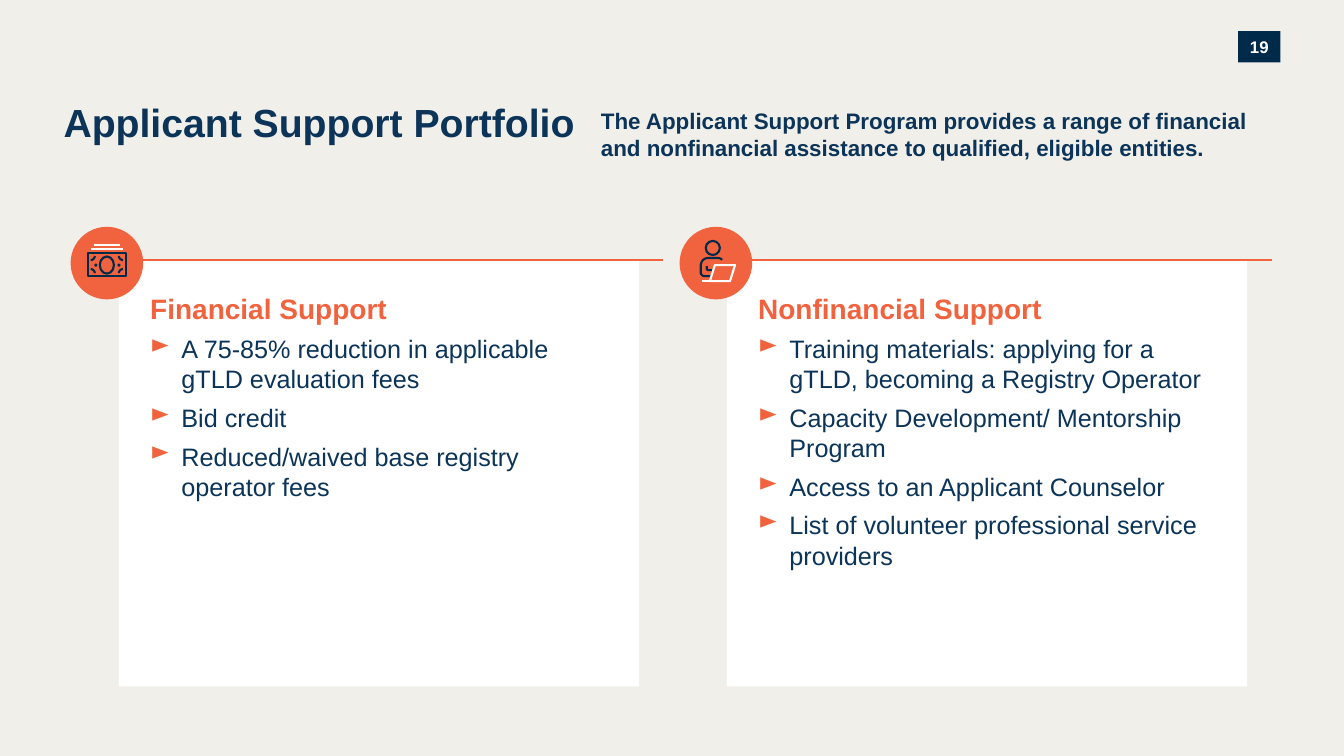
"""Build the Applicant Support Portfolio slide."""
import math
from dataclasses import dataclass

import lxml.etree
import pptx
import pptx.dml.color
import pptx.enum.shapes
import pptx.enum.text
import pptx.oxml.ns
import pptx.util

Inches = pptx.util.Inches
Pt = pptx.util.Pt
RGBColor = pptx.dml.color.RGBColor
Shapes = pptx.enum.shapes.MSO_SHAPE
Align = pptx.enum.text.PP_ALIGN
Anchor = pptx.enum.text.MSO_ANCHOR
qn = pptx.oxml.ns.qn
Point = tuple[float, float]

CREAM = RGBColor(0xF1, 0xEF, 0xEA)
NAVY = RGBColor(0x0B, 0x34, 0x58)
DARK = RGBColor(0x00, 0x2A, 0x49)
ORANGE = RGBColor(0xF1, 0x63, 0x3E)
WHITE = RGBColor(0xFF, 0xFF, 0xFF)
CARD_TOP = 2.58


@dataclass
class Card:
    left: float
    rule_start: float
    rule_end: float
    right_inset: float
    heading: str
    items: list[str]


CARDS = [
    Card(7.21, 7.21, 12.62, 0.35, "Nonfinancial Support", [
        "Training materials: applying for a gTLD, becoming a Registry Operator",
        "Capacity Development/ Mentorship Program",
        "Access to an Applicant Counselor",
        "List of volunteer professional service providers",
    ]),
    Card(1.18, 1.16, 6.58, 0.24, "Financial Support", [
        "A 75-85% reduction in applicable gTLD evaluation fees",
        "Bid credit",
        "Reduced/waived base registry operator fees",
    ]),
]


def set_frame(frame, *, insets=(0, 0, 0, 0), anchor=Anchor.TOP) -> None:
    """Set wrapping, insets (left, top, right, bottom) and anchor."""
    frame.word_wrap = True
    frame.auto_size = pptx.enum.text.MSO_AUTO_SIZE.NONE
    frame.vertical_anchor = anchor
    frame.margin_left, frame.margin_top, frame.margin_right, frame.margin_bottom = map(Inches, insets)


def write(paragraph, text: str, *, size: float, color: RGBColor, bold: bool = True,
          align=Align.LEFT, bullet: bool = False) -> None:
    """Write formatted text into a paragraph."""
    paragraph.alignment = align
    if bullet:
        paragraph.space_before = Pt(6)
        properties = paragraph._p.get_or_add_pPr()
        properties.set("marL", str(Inches(0.31)))
        properties.set("indent", str(Inches(-0.35)))
        bullet_color = lxml.etree.SubElement(properties, qn("a:buClr"))
        lxml.etree.SubElement(bullet_color, qn("a:srgbClr"), val=str(ORANGE))
        lxml.etree.SubElement(properties, qn("a:buChar"), char="►")
    run = paragraph.add_run()
    run.text = text
    run.font.name = "Arial"
    run.font.size = Pt(size)
    run.font.bold = bold
    run.font.color.rgb = color


def solid(shapes, kind, left: float, top: float, width: float, height: float, color: RGBColor):
    """Add a filled shape with no outline."""
    shape = shapes.add_shape(kind, *map(Inches, (left, top, width, height)))
    shape.shadow.inherit = False
    shape.fill.solid()
    shape.fill.fore_color.rgb = color
    shape.line.fill.background()
    return shape


def outline(shape, color: RGBColor) -> None:
    """Give an icon part a bare outline."""
    shape.shadow.inherit = False
    shape.fill.background()
    shape.line.color.rgb = color
    shape.line.width = Pt(1.5)


def ring(shapes, center: Point, width: float, height: float) -> None:
    """Add a dark unfilled oval around a center."""
    corner = (center[0] - width / 2, center[1] - height / 2)
    outline(shapes.add_shape(Shapes.OVAL, *map(Inches, (*corner, width, height))), DARK)


def path_stroke(shapes, points: list[Point], color: RGBColor, closed: bool = False) -> None:
    """Draw an outline through points."""
    first, *rest = [(Inches(x), Inches(y)) for x, y in points]
    builder = shapes.build_freeform(*first)
    builder.add_line_segments(rest, close=closed)
    outline(builder.convert_to_shape(), color)


def straight(shapes, start: Point, end: Point, color: RGBColor, width: float) -> None:
    """Draw a straight line."""
    line = shapes.add_connector(pptx.enum.shapes.MSO_CONNECTOR.STRAIGHT, *map(Inches, (*start, *end)))
    line.line.color.rgb = color
    line.line.width = Pt(width)
    lxml.etree.SubElement(line._element.spPr, qn("a:effectLst"))


def arc(center: Point, rx: float, ry: float, start: int, end: int) -> list[Point]:
    """Return points on an arc, with angles in degrees clockwise from the right."""
    angles = [math.radians(start + (end - start) * step / 8) for step in range(9)]
    return [(center[0] + rx * math.cos(a), center[1] + ry * math.sin(a)) for a in angles]


def draw_card(shapes, card: Card) -> None:
    """Draw a support card and its top rule."""
    panel = solid(shapes, Shapes.RECTANGLE, card.left, CARD_TOP, 5.16, 4.23, WHITE)
    frame = panel.text_frame
    set_frame(frame, insets=(0.31, 0.31, card.right_inset, 0.3))
    write(frame.paragraphs[0], card.heading, size=20, color=ORANGE)
    for item in card.items:
        write(frame.add_paragraph(), item, size=18, color=NAVY, bold=False, bullet=True)
    straight(shapes, (card.rule_start, CARD_TOP), (card.rule_end, CARD_TOP), ORANGE, 1.25)


def start_icon(slide, left: float):
    """Start an icon group with its orange disc."""
    shapes = slide.shapes.add_group_shape().shapes
    solid(shapes, Shapes.OVAL, left, 2.25, 0.72, 0.72, ORANGE)
    return shapes


def draw_person(slide) -> None:
    """Draw the person with a laptop."""
    icon = start_icon(slide, 6.74)
    ring(icon, (7.07, 2.46), 0.14, 0.14)
    path_stroke(icon, [(7.07, 2.68), (7.02, 2.68), (7.01, 2.67), (7.01, 2.64)], DARK)
    body = (arc((7.12, 2.62), 0.06, 0.06, 315, 270) + arc((7.02, 2.64), 0.07, 0.08, 270, 180)
            + arc((6.99, 2.7), 0.04, 0.04, 180, 90) + [(7.06, 2.74)])
    path_stroke(icon, body, DARK)
    straight(icon, (7.04, 2.79), (6.96, 2.79), WHITE, 1.5)
    path_stroke(icon, [(7.09, 2.63), (7.04, 2.79), (7.24, 2.79), (7.29, 2.63)], WHITE, closed=True)


def draw_money(slide) -> None:
    """Draw the stack of banknotes."""
    icon = start_icon(slide, 0.7)
    path_stroke(icon, [(0.87, 2.51), (1.25, 2.51), (1.25, 2.74), (0.87, 2.74)], DARK, closed=True)
    ring(icon, (1.06, 2.63), 0.14, 0.17)
    for x in (0.95, 1.18):
        ring(icon, (x, 2.63), 0.01, 0.01)
    corners = [(0.9, 2.54), (1.22, 2.54), (1.22, 2.71), (0.9, 2.71)]
    for turn, corner in enumerate(corners):
        path_stroke(icon, arc(corner, 0.04, 0.04, 90 * turn, 90 * turn + 90), DARK)
    straight(icon, (0.9, 2.47), (1.22, 2.47), WHITE, 1.5)
    straight(icon, (0.93, 2.43), (1.19, 2.43), WHITE, 1.5)


def main() -> None:
    """Build and save the slide."""
    deck = pptx.Presentation()
    deck.slide_width, deck.slide_height = Inches(13.33), Inches(7.5)
    slide = deck.slides.add_slide(deck.slide_layouts[5])
    slide.background.fill.solid()
    slide.background.fill.fore_color.rgb = CREAM

    heading = slide.shapes.title
    heading.left, heading.top, heading.width, heading.height = map(Inches, (0.63, 0.98, 5.16, 0.92))
    set_frame(heading.text_frame)
    write(heading.text_frame.paragraphs[0], "Applicant Support Portfolio", size=28, color=NAVY)

    page = solid(slide.shapes, Shapes.RECTANGLE, 12.28, 0.31, 0.42, 0.31, DARK)
    set_frame(page.text_frame, anchor=Anchor.MIDDLE)
    write(page.text_frame.paragraphs[0], "19", size=12, color=WHITE, align=Align.CENTER)

    for card in CARDS:
        draw_card(slide.shapes, card)

    summary = slide.shapes.add_textbox(*map(Inches, (5.96, 1.06, 6.59, 0.54)))
    set_frame(summary.text_frame)
    write(summary.text_frame.paragraphs[0],
          "The Applicant Support Program provides a range of financial and nonfinancial "
          "assistance to qualified, eligible entities.", size=16, color=NAVY)

    draw_person(slide)
    draw_money(slide)
    deck.save("out.pptx")


if __name__ == "__main__":
    main()
